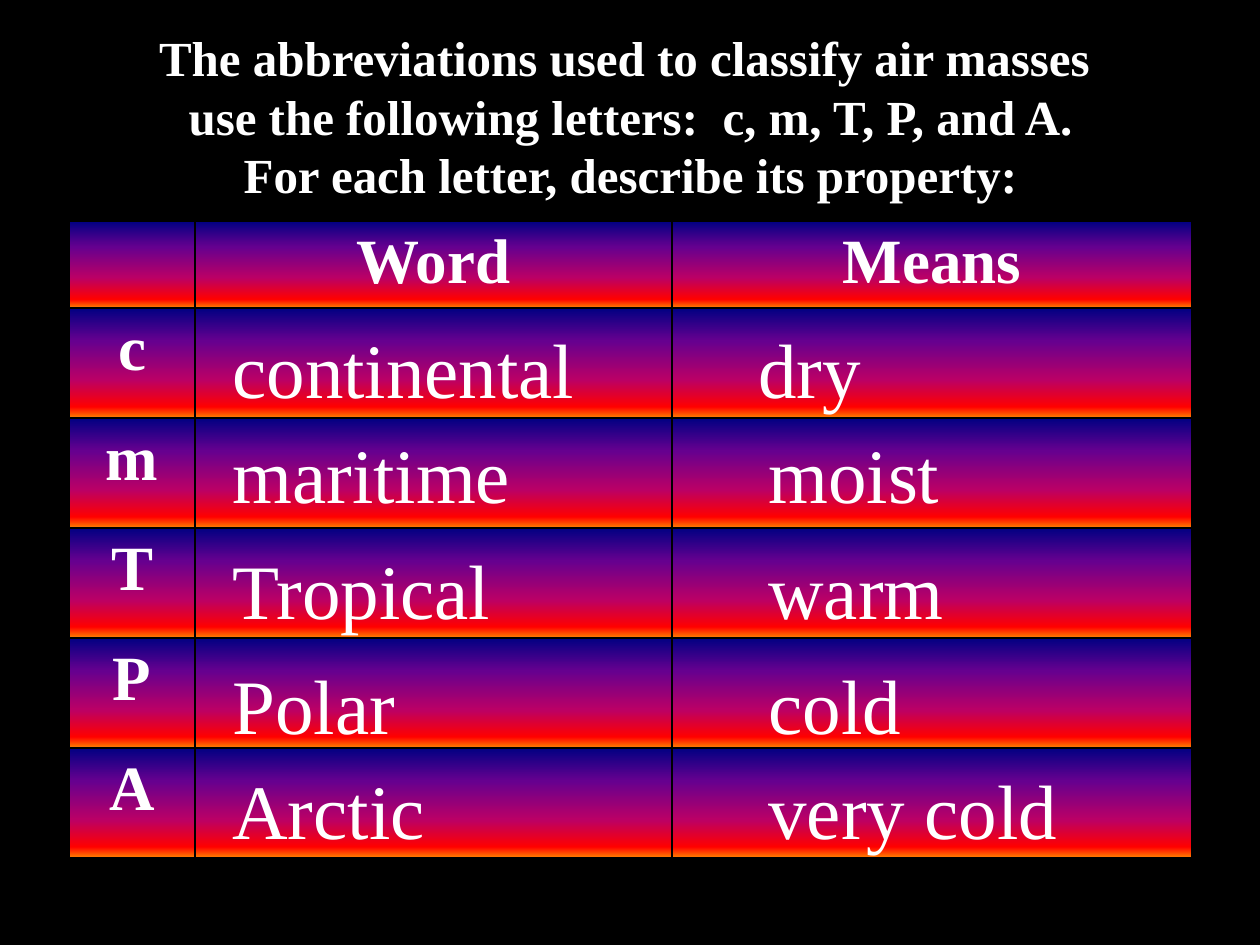
from lxml import etree
from pptx import Presentation
from pptx import util as u
from pptx.dml.color import RGBColor
from pptx.enum import text
from pptx.oxml import ns

PX = 914400 / 126
FONT = "Times New Roman"
GRADIENT = [(0, "000082"), (30, "66008F"), (65, "BA0066"), (90, "FF0000"), (100, "FF8200")]
TITLE = [
    "The abbreviations used to classify air masses ",
    "use the following letters:  c, m, T, P, and A.",
    "For each letter, describe its property:",
]
# letter, word, meaning, answer top and meaning left (relative to the table)
AIR_MASSES = [
    ("c", "continental", "dry", 94, 677),
    ("m", "maritime", "moist", 199, 687),
    ("T", "Tropical", "warm", 315, 687),
    ("P", "Polar", "cold", 430, 687),
    ("A", "Arctic", "very cold", 535, 687),
]
COLUMNS = [126, 477, 520]
ROWS = [87] + [110] * len(AIR_MASSES)


def px(n):
    return u.Emu(round(n * PX))


def color(hex_string):
    return RGBColor.from_string(hex_string)


def write(tf, lines, size, bold=False, align=text.PP_ALIGN.LEFT):
    for i, line in enumerate(lines):
        p = tf.paragraphs[0] if i == 0 else tf.add_paragraph()
        p.alignment = align
        r = p.add_run()
        r.text = line
        for name, value in {"name": FONT, "size": u.Pt(size), "bold": bold}.items():
            setattr(r.font, name, value)
        r.font.color.rgb = color("FFFFFF")


def sub(parent, tag, **attrs):
    return etree.SubElement(parent, ns.qn(tag), {k: str(v) for k, v in attrs.items()})


def style_cell(cell):
    """Give a cell thin black borders and the vertical gradient."""
    tc_pr = cell._tc.get_or_add_tcPr()
    for side in "LRTB":
        line = sub(tc_pr, f"a:ln{side}", w=u.Pt(1))
        sub(sub(line, "a:solidFill"), "a:srgbClr", val="000000")
    grad = sub(tc_pr, "a:gradFill", rotWithShape=0)
    stops = sub(grad, "a:gsLst")
    for position, value in GRADIENT:
        sub(sub(stops, "a:gs", pos=position * 1000), "a:srgbClr", val=value)
    sub(grad, "a:lin", ang=90 * 60000, scaled=1)


def add_title(s, x, y, w, h):
    sp = s.shapes.title
    box = {"left": x, "top": y, "width": w, "height": h}
    for name, value in box.items():
        setattr(sp, name, px(value))
    tf = sp.text_frame
    tf.auto_size = text.MSO_AUTO_SIZE.NONE
    tf.word_wrap = False
    tf.vertical_anchor = text.MSO_ANCHOR.TOP
    write(tf, TITLE, 28, True, text.PP_ALIGN.CENTER)


def add_letter_table(s, x, y):
    frame = s.shapes.add_table(len(ROWS), len(COLUMNS), px(x), px(y),
                               px(sum(COLUMNS)), px(sum(ROWS)))
    table = frame.table
    table.first_row = table.horz_banding = False
    for column, width in zip(table.columns, COLUMNS):
        column.width = px(width)
    for row, height in zip(table.rows, ROWS):
        row.height = px(height)
    for cell in table.iter_cells():
        style_cell(cell)
    labels = {(0, 1): "Word", (0, 2): "Means"}
    labels.update({(i, 0): mass[0] for i, mass in enumerate(AIR_MASSES, 1)})
    for (row, column), label in labels.items():
        write(table.cell(row, column).text_frame, [label], 36, True, text.PP_ALIGN.CENTER)


def add_answers(s, x, y):
    for _, word, meaning, top, meaning_left in AIR_MASSES:
        for answer, left in ((word, 151), (meaning, meaning_left)):
            sp = s.shapes.add_textbox(px(x + left), px(y + top), px(410), px(105))
            sp.text_frame.word_wrap = True
            write(sp.text_frame, [answer], 44)


def main():
    prs = Presentation()
    prs.slide_width, prs.slide_height = px(1260), px(945)
    s = prs.slides.add_slide(prs.slide_layouts[5])
    s.background.fill.solid()
    s.background.fill.fore_color.rgb = color("000000")
    add_title(s, 145, 21, 971, 248)
    add_letter_table(s, 69, 221)
    add_answers(s, 69, 221)
    prs.save("out.pptx")


if __name__ == "__main__":
    main()
